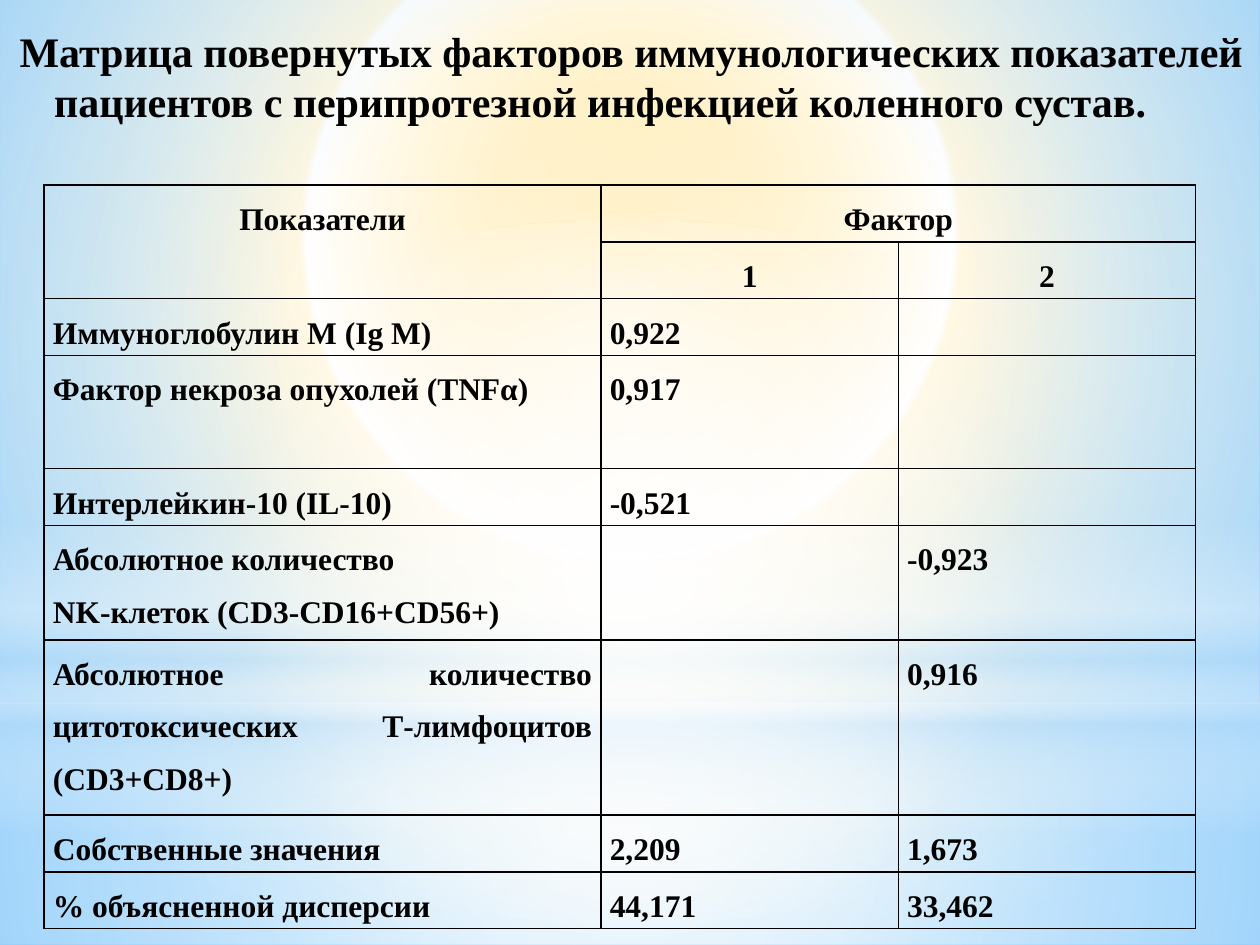
from lxml.etree import SubElement
from pptx import Presentation
from pptx.dml.color import RGBColor
from pptx.enum.shapes import MSO_SHAPE
from pptx.enum.text import PP_ALIGN
from pptx.oxml.ns import qn
from pptx.util import Inches, Pt

COLORS = {"text": "000000", "amber": "FFC000", "gold": "FFD248", "white": "FFFFFF",
          "cream": "FFECB2", "sky": "5BB9FF", "pale": "B4DCFA"}
FONT = "Times New Roman"

TITLE = ("Матрица повернутых факторов иммунологических показателей "
         "пациентов с перипротезной инфекцией коленного сустав.")
HEADER_ROWS = 2
ROWS = [
    (0.45, "Показатели", "Фактор", ""),
    (0.45, "", "1", "2"),
    (0.45, "Иммуноглобулин М (Ig M)", "0,922", ""),
    (0.9, "Фактор некроза опухолей (TNFα)", "0,917", ""),
    (0.45, "Интерлейкин-10 (IL-10)", "-0,521", ""),
    (0.91, "Абсолютное количество\nNK-клеток (CD3-СD16+CD56+)", "", "-0,923"),
    (1.39, "Абсолютное количество цитотоксических Т-лимфоцитов (CD3+СD8+)", "", "0,916"),
    (0.45, "Собственные значения", "2,209", "1,673"),
    (0.45, "% объясненной дисперсии", "44,171", "33,462"),
]
COLUMN_WIDTHS = [4.42, 2.36, 2.36]

# Gradient stops: position %, colour, opacity %
SUN = [(0, "amber", 100), (17, "gold", 100), (41, "white", 100),
       (42, "cream", 100), (100, "sky", 100)]
CENTER = (50, 50, 50, 50)
# Shape, box, stops, focus rectangle (None means top to bottom)
SKY_LAYERS = [
    (MSO_SHAPE.RECTANGLE, (0, 5.58, 10, 1.92),
     [(0, "white", 91), (37, "white", 76), (100, "pale", 79)], CENTER),
    (MSO_SHAPE.RECTANGLE, (0, 0, 10, 5.58),
     [(0, "white", 89), (48, "white", 62), (100, "pale", 79)], CENTER),
    (MSO_SHAPE.RECTANGLE, (0, 4.12, 10, 2.5),
     [(0, "white", 0), (29, "white", 30), (45, "pale", 40),
      (55, "white", 26), (65, "pale", 60), (100, "white", 0)], None),
    (MSO_SHAPE.OVAL, (0, 1.75, 10, 5.58),
     [(0, "white", 100), (56, "white", 0)], CENTER),
]


def set_gradient(fill, parent, stops, focus):
    fill.gradient()
    gradient = parent.find(qn("a:gradFill"))
    for child in list(gradient):
        gradient.remove(child)
    stop_list = SubElement(gradient, qn("a:gsLst"))
    for position, color, opacity in stops:
        stop = SubElement(stop_list, qn("a:gs"), pos=str(position * 1000))
        rgb = SubElement(stop, qn("a:srgbClr"), val=COLORS[color])
        if opacity < 100:
            SubElement(rgb, qn("a:alpha"), val=str(opacity * 1000))
    if focus:
        circle = SubElement(gradient, qn("a:path"), path="circle")
        edges = {side: str(value * 1000) for side, value in zip("ltrb", focus)}
        SubElement(circle, qn("a:fillToRect"), **edges)
    else:
        SubElement(gradient, qn("a:lin"), ang="5400000", scaled="0")


def format_paragraph(paragraph, size, alignment):
    paragraph.alignment = alignment
    for run in paragraph.runs:
        run.font.name = FONT
        run.font.size = Pt(size)
        run.font.bold = True
        run.font.color.rgb = RGBColor.from_string(COLORS["text"])


def add_borders(cell):
    properties = cell._tc.get_or_add_tcPr()
    for index, side in enumerate(("a:lnL", "a:lnR", "a:lnT", "a:lnB")):
        line = SubElement(properties, qn(side), w=str(Pt(1)))
        solid = SubElement(line, qn("a:solidFill"))
        SubElement(solid, qn("a:srgbClr"), val=COLORS["text"])
        properties.insert(index, line)


prs = Presentation()
prs.slide_width, prs.slide_height = Inches(10), Inches(7.5)
slide = prs.slides.add_slide(prs.slide_layouts[6])

# Background sun and sky layers
sun_fill = slide.background.fill
sun_fill.gradient()
set_gradient(sun_fill, slide.element.find(".//" + qn("p:bgPr")), SUN, (20, 10, 20, 60))
for kind, box, stops, focus in SKY_LAYERS:
    layer = slide.shapes.add_shape(kind, *map(Inches, box))
    layer.shadow.inherit = False
    layer.line.fill.background()
    set_gradient(layer.fill, layer.element.spPr, stops, focus)

# Factor table
heights = [row[0] for row in ROWS]
factors = slide.shapes.add_table(
    len(ROWS), len(COLUMN_WIDTHS), Inches(0.35), Inches(1.47),
    Inches(sum(COLUMN_WIDTHS)), Inches(sum(heights))).table
factors.first_row = False
factors.horz_banding = False
for column, width in zip(factors.columns, COLUMN_WIDTHS):
    column.width = Inches(width)
for r, (height, *texts) in enumerate(ROWS):
    factors.rows[r].height = Inches(height)
    alignment = PP_ALIGN.CENTER if r < HEADER_ROWS else PP_ALIGN.JUSTIFY
    for c, text in enumerate(texts):
        cell = factors.cell(r, c)
        cell.margin_left = cell.margin_right = Inches(0.07)
        cell.margin_top = cell.margin_bottom = 0
        cell.fill.background()
        add_borders(cell)
        if text:
            cell.text_frame.text = text
            for paragraph in cell.text_frame.paragraphs:
                paragraph.line_spacing = 1.5
                format_paragraph(paragraph, 18, alignment)
factors.cell(0, 0).merge(factors.cell(1, 0))
factors.cell(0, 1).merge(factors.cell(0, 2))

# Title
title = slide.shapes.add_textbox(Inches(-0.47), Inches(0.15), Inches(10.47), Inches(0.91))
title.text_frame.word_wrap = True
title.text_frame.text = TITLE
heading = title.text_frame.paragraphs[0]
format_paragraph(heading, 24, PP_ALIGN.CENTER)
heading_properties = heading._p.get_or_add_pPr()
heading_properties.set("marL", "0")
heading_properties.set("indent", str(Inches(0.49)))

prs.save("out.pptx")
